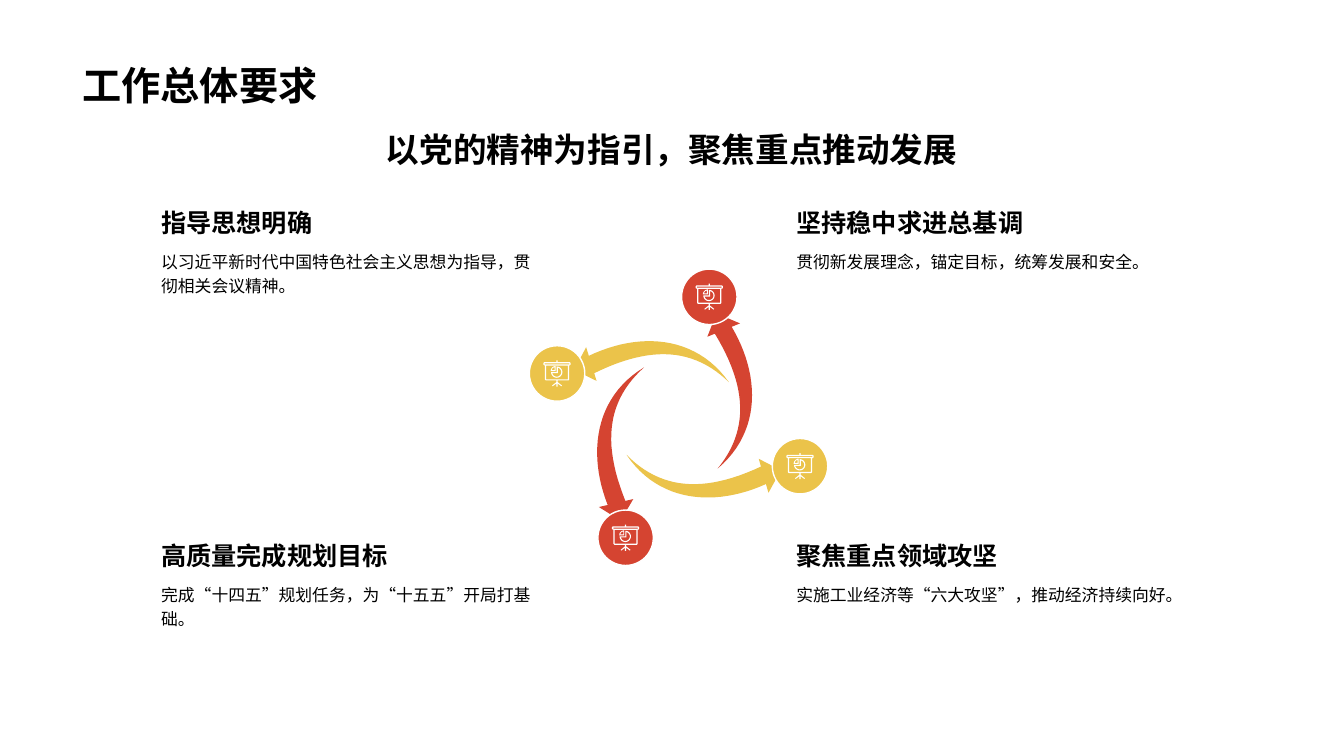
from math import cos, radians, sin

from pptx import Presentation
from pptx.dml.color import RGBColor
from pptx.enum.shapes import MSO_SHAPE as Preset
from pptx.enum.text import MSO_ANCHOR as Anchor, PP_ALIGN as Align
from pptx.util import Inches, Pt

# Content
TITLE = "工作总体要求"
SUBTITLE = "以党的精神为指引，聚焦重点推动发展"
# heading, body, text column, text row, colour, arrow (left, top, turn), badge (left, top)
REQUIREMENTS = [
    ("指导思想明确", "以习近平新时代中国特色社会主义思想为指导，贯彻相关会议精神。",
     0, 0, "gold", (6.06, 2.93, 72.8), (5.25, 3.43)),
    ("坚持稳中求进总基调", "贯彻新发展理念，锚定目标，统筹发展和安全。",
     1, 0, "red", (6.82, 3.13, 157.8), (6.76, 2.67)),
    ("聚焦重点领域攻坚", "实施工业经济等“六大攻坚”，推动经济持续向好。",
     1, 1, "gold", (6.63, 3.96, 254), (7.66, 4.35)),
    ("高质量完成规划目标", "完成“十四五”规划任务，为“十五五”开局打基础。",
     0, 1, "red", (5.81, 3.71, 347), (5.93, 5.06)),
]

THEME = {
    "font": "Arial",
    "black": "000000", "white": "FFFFFF", "gold": "EBC34A", "red": "D54431",
    "title": 28, "subtitle": 24, "heading": 18, "body": 12,
}

# Layout, in inches
COLUMNS = (1.5, 7.8)
ROWS = (1.96, 5.26)
TEXT_WIDTH, HEADING_HEIGHT, BODY_HEIGHT = 4.02, 0.45, 0.84
BADGE = 0.55
ICON_WIDTH, ICON_HEIGHT = 0.27, 0.26


def colour(name):
    return RGBColor.from_string(THEME[name])


def add_text(text, left, top, width, height, size="body", bold=False,
             anchor=Anchor.TOP, align=Align.LEFT, spacing=1.0):
    frame = slide.shapes.add_textbox(
        Inches(left), Inches(top), Inches(width), Inches(height)).text_frame
    frame.word_wrap = True
    frame.vertical_anchor = anchor
    paragraph = frame.paragraphs[0]
    paragraph.alignment = align
    paragraph.line_spacing = spacing
    run = paragraph.add_run()
    run.text = text
    run.font.name = THEME["font"]
    run.font.size = Pt(THEME[size])
    run.font.bold = bold
    run.font.color.rgb = colour("black")


def add_outline(contours, left, top, fill):
    contours = [[(Inches(x), Inches(y)) for x, y in points] for points in contours]
    builder = slide.shapes.build_freeform(*contours[0][0])
    for number, points in enumerate(contours):
        if number:
            builder.move_to(*points[0])
        builder.add_line_segments(points[1:], close=True)
    outline = builder.convert_to_shape(Inches(left), Inches(top))
    outline.shadow.inherit = False
    outline.fill.solid()
    outline.fill.fore_color.rgb = colour(fill)
    outline.line.fill.background()
    return outline


def curve(start, pull_out, pull_in, end, steps=24):
    """Points along a cubic curve."""
    controls = (start, pull_out, pull_in, end)
    points = []
    for step in range(steps + 1):
        t = step / steps
        weights = ((1 - t) ** 3, 3 * t * (1 - t) ** 2, 3 * t ** 2 * (1 - t), t ** 3)
        points.append(tuple(sum(w * p[axis] for w, p in zip(weights, controls))
                            for axis in (0, 1)))
    return points


def sector(corner, centre, radius, start, end, steps=24):
    """A pie slice whose arc turns around centre and whose sides meet at corner."""
    angles = [radians(start + (end - start) * step / steps) for step in range(steps + 1)]
    return [corner] + [(centre[0] + radius * cos(a), centre[1] + radius * sin(a))
                       for a in angles]


def box(left, top, right, bottom):
    return [(left, top), (right, top), (right, bottom), (left, bottom)]


def board_icon():
    """A flip chart with a pie on it, in thousandths of an inch."""
    right_half = [
        (141, 0), (141, 18), (262, 18), (270, 26), (270, 42), (262, 50), (255, 50),
        (255, 192), (247, 200), (141, 200), (141, 216), (184, 250), (178, 258),
        (141, 230), (141, 260)]
    left_half = [(270 - x, y) for x, y in reversed(right_half)]
    pie, wedge, gap = (132, 117), (122, 107), (112, 97)
    contours = [
        right_half + left_half,
        box(13, 30, 257, 40),
        box(27, 52, 243, 188),
        sector(pie, pie, 56, -90, 180),
        sector((143, 128), pie, 45, -76, 166),
        sector(wedge, wedge, 50, 180, 270),
        sector(gap, gap, 28, 180, 270),
    ]
    return [[(x / 1000, y / 1000) for x, y in points] for points in contours]


# The arrow points down before it is turned
TAIL = (0.75, 0)
ARROW = [
    (0, 1.25),
    *curve((0.09, 1.25), (0.01, 0.71), (0.2, 0.18), TAIL),
    *curve(TAIL, (0.33, 0.23), (0.17, 0.62), (0.27, 1.25)),
    (0.35, 1.25),
    (0.18, 1.43),
]
ICON = board_icon()

deck = Presentation()
deck.slide_width, deck.slide_height = Inches(13.33), Inches(7.5)
slide = deck.slides.add_slide(deck.slide_layouts[6])

# Title and subtitle
add_text(TITLE, 0.72, 0.14, 11.88, 0.98, size="title", bold=True, anchor=Anchor.BOTTOM)
add_text(SUBTITLE, 0.72, 1.23, 11.88, 0.73, size="subtitle", bold=True, align=Align.CENTER)

for heading, body, column, row, tint, (x, y, turn), (badge_x, badge_y) in REQUIREMENTS:
    # Swirling arrow
    arrow = add_outline([ARROW], x, y, tint)
    arrow.rotation = turn

    # Round badge with its icon
    badge = slide.shapes.add_shape(
        Preset.OVAL, Inches(badge_x), Inches(badge_y), Inches(BADGE), Inches(BADGE))
    badge.shadow.inherit = False
    badge.fill.solid()
    badge.fill.fore_color.rgb = colour(tint)
    badge.line.color.rgb = colour("white")
    badge.line.width = Pt(1)
    add_outline(ICON, badge_x + (BADGE - ICON_WIDTH) / 2,
                badge_y + (BADGE - ICON_HEIGHT) / 2, "white")

    # Heading and body
    left, top = COLUMNS[column], ROWS[row]
    add_text(heading, left, top, TEXT_WIDTH, HEADING_HEIGHT,
             size="heading", bold=True, anchor=Anchor.BOTTOM)
    add_text(body, left, top + HEADING_HEIGHT, TEXT_WIDTH, BODY_HEIGHT, spacing=1.2)

deck.save("out.pptx")
